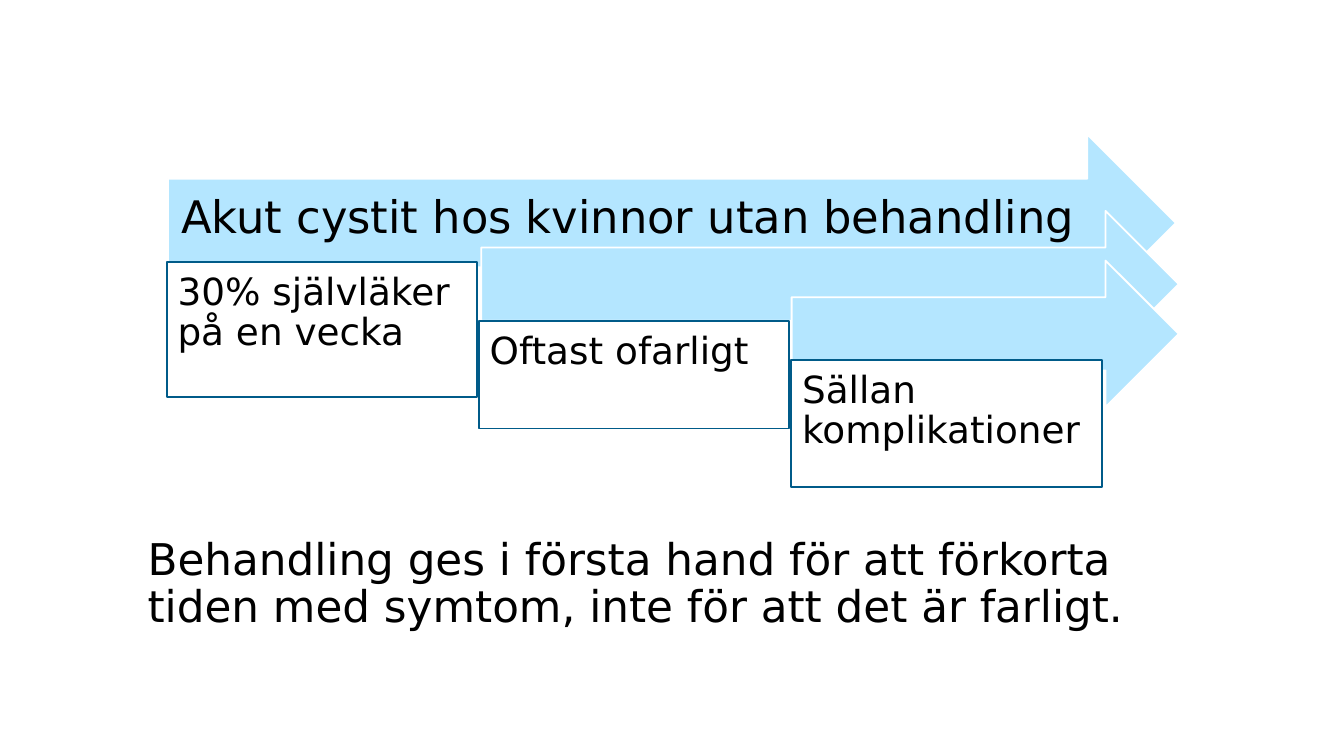
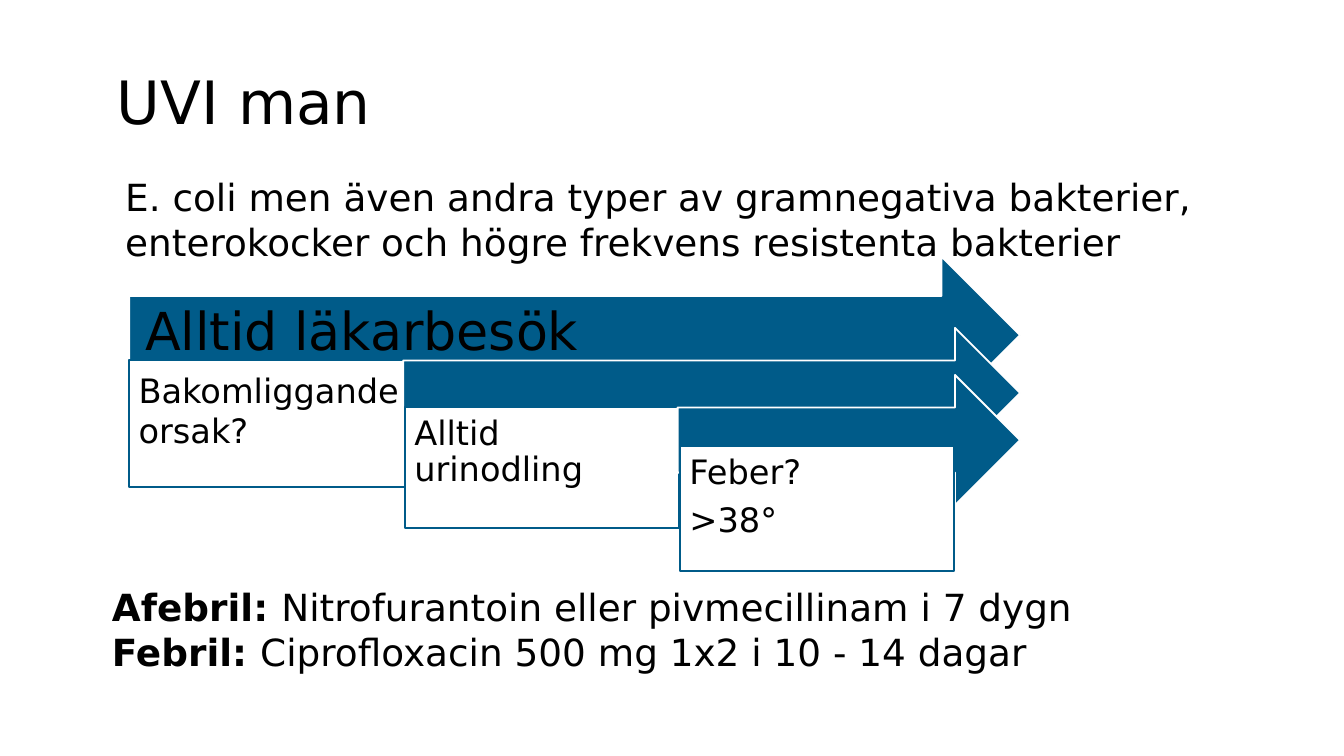
from pptx import Presentation
from pptx.dml.color import RGBColor
from pptx.enum.shapes import MSO_SHAPE
from pptx.enum.text import MSO_ANCHOR, PP_ALIGN
from pptx.util import Pt

FONT = "DejaVu Sans"
BLACK = RGBColor(0, 0, 0)
WHITE = RGBColor(255, 255, 255)
SKY = RGBColor(0xB4, 0xE6, 0xFF)
NAVY = RGBColor(0, 0x5B, 0x89)

deck = Presentation()
deck.slide_width, deck.slide_height = Pt(720), Pt(405)


def write(shape, lines, size, pads=(7.2, 3.6, 7.2, 3.6), gaps=(1,),
          after=0, anchor=MSO_ANCHOR.TOP, wrap=True):
    """Fill a shape with lines, each a list of (text, bold) runs."""
    frame = shape.text_frame
    frame.word_wrap = wrap
    frame.vertical_anchor = anchor
    frame.margin_left, frame.margin_top, frame.margin_right, frame.margin_bottom = map(Pt, pads)
    for i, line in enumerate(lines):
        para = frame.add_paragraph() if i else frame.paragraphs[0]
        para.alignment = PP_ALIGN.LEFT
        para.line_spacing = gaps[min(i, len(gaps) - 1)]
        para.space_before, para.space_after = Pt(0), Pt(after)
        for text, bold in line:
            run = para.add_run()
            run.text = text
            run.font.name, run.font.size = FONT, Pt(size)
            run.font.bold = bold
            run.font.color.rgb = BLACK


def block(slide, kind, box, fill, edge):
    shape = slide.shapes.add_shape(kind, *map(Pt, box))
    shape.shadow.inherit = False
    shape.fill.solid()
    shape.fill.fore_color.rgb = fill
    shape.line.color.rgb = edge
    shape.line.width = Pt(1)
    return shape


# Each flow: arrow colour, heading size and pads, box size and pad,
# then steps of (arrow box, card box, card lines, line spacing)
flows = [
    (SKY, "Akut cystit hos kvinnor utan behandling", 24, (7.2, 7.2, 20, 12), 20, 5.8, [
        ((90, 72, 540, 95), (89.3, 140.6, 166.3, 72), ["30% självläker på en vecka"], 0.9),
        ((257.8, 113, 373.7, 78.5), (256.5, 172, 166.3, 57.6), ["Oftast ofarligt"], 0.9),
        ((424.1, 139.6, 207.4, 78.5), (423.9, 193, 166.3, 67.8), ["Sällan komplikationer"], 0.9),
    ]),
    (NAVY, "Alltid läkarbesök", 28, (8.6, 8.6, 20, 10.8), 18, 5.2, [
        ((69.2, 137.5, 477.3, 84.2), (69.1, 193, 177.1, 68.1), ["Bakomliggande orsak?"], 1),
        ((216, 175.7, 330.5, 69.8), (216.8, 218, 147, 64.8), ["Alltid urinodling"], 0.9),
        ((363, 200.9, 183.5, 69.8), (364.2, 239, 147, 67), ["Feber?", ">38°"], 0.9),
    ]),
]

# Arrows with cards, alike on both slides
slides = []
for color, head, big, pads, small, pad, steps in flows:
    slide = deck.slides.add_slide(deck.slide_layouts[6])
    slides.append(slide)
    for i, (shaft, card, lines, gap) in enumerate(steps):
        arrow = block(slide, MSO_SHAPE.RIGHT_ARROW, shaft, color, WHITE)
        if i == 0:
            write(arrow, [[(head, False)]], big, pads, (0.9,), 0, MSO_ANCHOR.MIDDLE)
        rect = block(slide, MSO_SHAPE.RECTANGLE, card, WHITE, NAVY)
        write(rect, [[(line, False)] for line in lines], small, (pad,) * 4, (gap,), 6.3)

# Slide 1: closing remark
first, second = slides
note = first.shapes.add_textbox(Pt(72), Pt(284.4), Pt(553), Pt(153))
write(note, [[("Behandling ges i första hand för att förkorta tiden med symtom, "
               "inte för att det är farligt.", False)]], 23.4, gaps=(0.9,))

# Slide 2: treatment, title and bacteria
cure = second.shapes.add_textbox(Pt(60), Pt(301), Pt(561.6), Pt(73.4))
write(cure, [
    [("Afebril: ", True), ("Nitrofurantoin eller pivmecillinam i 7 dygn", False)],
    [("Febril: ", True), ("Ciprofloxacin 500 mg 1x2 i 10 - 14 dagar", False)],
], 20, (0, 0, 0, 0), (1.5, 1))

title = second.shapes.add_textbox(Pt(55.6), Pt(31), Pt(399), Pt(47.5))
write(title, [[("UVI man", False)]], 32)

germs = second.shapes.add_textbox(Pt(60), Pt(90), Pt(595.4), Pt(55.4))
write(germs, [
    [("E. coli men även andra typer av gramnegativa bakterier,", False)],
    [("enterokocker och högre frekvens resistenta bakterier", False)],
], 20, wrap=False)

deck.save("out.pptx")
